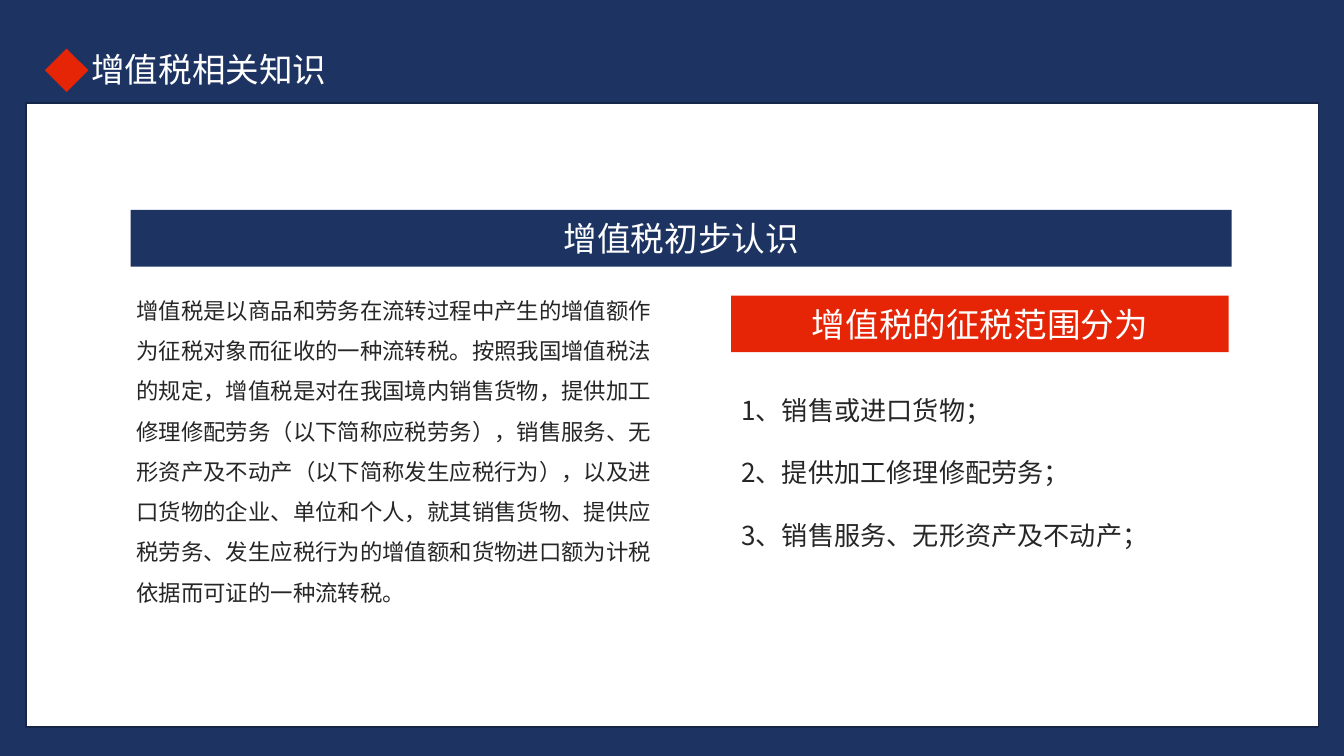
from lxml import etree
from pptx import Presentation
from pptx.dml.color import RGBColor
from pptx.enum.shapes import MSO_SHAPE
from pptx.enum.text import MSO_ANCHOR, MSO_AUTO_SIZE, PP_ALIGN
from pptx.oxml.ns import qn
from pptx.util import Cm, Pt

RECT, DIAMOND = MSO_SHAPE.RECTANGLE, MSO_SHAPE.DIAMOND
TOP, MIDDLE = MSO_ANCHOR.TOP, MSO_ANCHOR.MIDDLE
LEFT, CENTER = PP_ALIGN.LEFT, PP_ALIGN.CENTER
NO_FIT = MSO_AUTO_SIZE.NONE
NAVY, RED, WHITE, INK, EDGE = "1D3463", "E52505", "FFFFFF", "262626", "152649"
LATIN, HAN = "Arial", "Noto Sans CJK SC"

TITLE = "增值税相关知识"
HEAD = "增值税初步认识"
SCOPE = "增值税的征税范围分为"
BODY = (
    "增值税是以商品和劳务在流转过程中产生的增值额作为征税对象而征收的一种流转税。"
    "按照我国增值税法的规定，增值税是对在我国境内销售货物，提供加工修理修配劳务"
    "（以下简称应税劳务），销售服务、无形资产及不动产（以下简称发生应税行为），"
    "以及进口货物的企业、单位和个人，就其销售货物、提供应税劳务、发生应税行为的"
    "增值额和货物进口额为计税依据而可证的一种流转税。"
)
ITEMS = [
    "1、销售或进口货物；",
    "2、提供加工修理修配劳务；",
    "3、销售服务、无形资产及不动产；",
]


def color(code):
    return RGBColor.from_string(code)


def write(shape, lines, size, code, face=LATIN, align=LEFT, anchor=TOP, wrap=True, space=1):
    frame = shape.text_frame
    frame.text = "\n".join(lines)
    frame.word_wrap = wrap
    frame.auto_size = NO_FIT
    frame.vertical_anchor = anchor
    for par in frame.paragraphs:
        par.alignment = align
        par.line_spacing = space
        for run in par.runs:
            run.font.size = Pt(size)
            run.font.name = face
            run.font.color.rgb = color(code)
            east = etree.SubElement(run.font._element, qn("a:ea"))
            east.set("typeface", HAN)


def add_block(slide, kind, box, fill, edge=None):
    shape = slide.shapes.add_shape(kind, *map(Cm, box))
    shape.shadow.inherit = False
    shape.fill.solid()
    shape.fill.fore_color.rgb = color(fill)
    if edge:
        shape.line.color.rgb = color(edge)
        shape.line.width = Pt(1)
    else:
        shape.line.fill.background()
    return shape


def add_banner(slide, box, fill, text):
    shape = add_block(slide, RECT, box, fill)
    write(shape, [text], 18, WHITE, align=CENTER, anchor=MIDDLE, wrap=False)


def add_text(slide, box, lines, size, face, space):
    shape = slide.shapes.add_textbox(*map(Cm, box))
    write(shape, lines, size, INK, face, space=space)


def set_title(slide, box, text):
    title = slide.shapes.title
    title.left, title.top, title.width, title.height = map(Cm, box)
    write(title, [text], 18, WHITE, wrap=False)


def main():
    deck = Presentation()
    deck.slide_width, deck.slide_height = Cm(25.4), Cm(14.29)
    slide = deck.slides.add_slide(deck.slide_layouts[5])
    slide.background.fill.solid()
    slide.background.fill.fore_color.rgb = color(NAVY)

    set_title(slide, (1.47, 0.79, 5, 1.02), TITLE)
    add_block(slide, RECT, (0.5, 1.95, 24.42, 11.8), WHITE, EDGE)
    add_block(slide, DIAMOND, (0.85, 0.92, 0.82, 0.82), RED)
    add_banner(slide, (2.47, 3.97, 20.81, 1.07), NAVY, HEAD)
    add_banner(slide, (13.82, 5.59, 9.4, 1.07), RED, SCOPE)
    add_text(slide, (2.33, 5.23, 10.64, 6.35), [BODY], 12, LATIN, 1.5)
    add_text(slide, (13.76, 6.73, 9.32, 3.81), ITEMS, 14, HAN, 2)
    deck.save("out.pptx")


if __name__ == "__main__":
    main()
